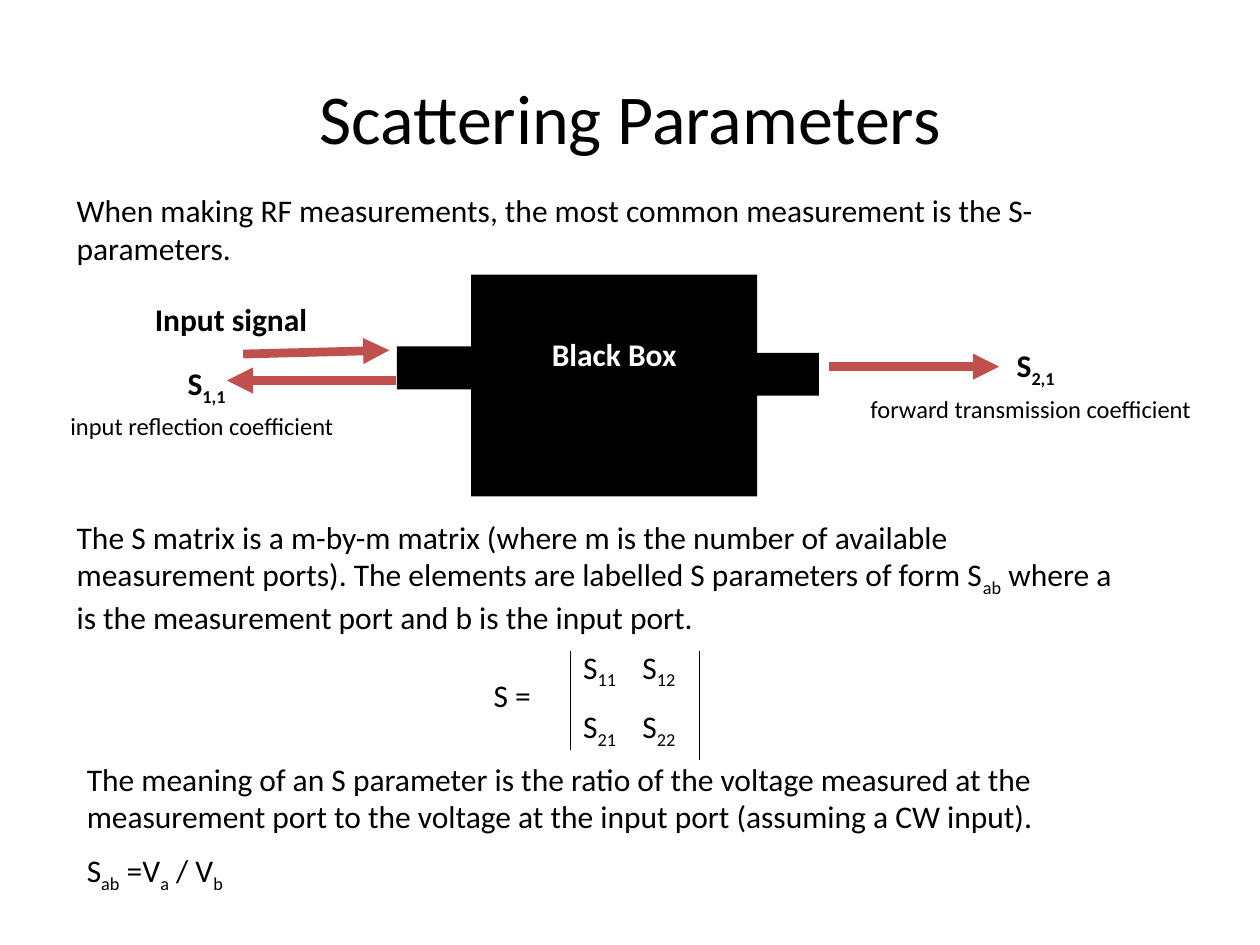
from pptx import Presentation, util as u
from pptx.dml.color import RGBColor
from pptx.enum import shapes, text
from pptx.oxml.ns import qn
from lxml import etree

BLACK, WHITE, RED = "000000", "FFFFFF", "C0504D"


def px(n):
    """100 px make one inch."""
    return u.Emu(n * 9144)


def rgb(value):
    return RGBColor.from_string(value)


def write(tf, paragraphs, size=18, bold=False, color=BLACK, align=None):
    """Fill a text frame; every second part between bars is a subscript."""
    for i, line in enumerate(paragraphs):
        p = tf.paragraphs[0] if i == 0 else tf.add_paragraph()
        if i:
            p.space_before = u.Pt(size / 2)
        p.alignment = align
        p.font.size, p.font.bold, p.font.name = u.Pt(size), bold, "Calibri"
        p.font.color.rgb = rgb(color)
        for j, part in enumerate(line.split("|")):
            r = p.add_run()
            r.text = part
            if j % 2:
                r.font._element.set("baseline", "-25000")


def add_text(s, x, y, w, h, *paragraphs, wrap=True, anchor=text.MSO_ANCHOR.TOP, **style):
    tf = s.shapes.add_textbox(px(x), px(y), px(w), px(h)).text_frame
    tf.word_wrap = wrap
    tf.vertical_anchor = anchor
    write(tf, paragraphs, **style)


def add_block(s, x, y, w, h):
    sp = s.shapes.add_shape(shapes.MSO_SHAPE.RECTANGLE, px(x), px(y), px(w), px(h))
    sp.shadow.inherit = False
    sp.fill.solid()
    sp.fill.fore_color.rgb = rgb(BLACK)
    sp.line.fill.background()
    return sp


def add_line(s, x1, y1, x2, y2, color=BLACK, width=0.75, arrow=False):
    c = s.shapes.add_connector(shapes.MSO_CONNECTOR.STRAIGHT, px(x1), px(y1), px(x2), px(y2))
    c.line.color.rgb = rgb(color)
    c.line.width = u.Pt(width)
    if arrow:
        etree.SubElement(c.line._get_or_add_ln(), qn("a:tailEnd"), type="triangle")
    etree.SubElement(c._element.spPr, qn("a:effectLst"))


def two_port_diagram(s, x, y):
    box = add_block(s, x + 328, y, 227, 176)
    tf = box.text_frame
    tf.vertical_anchor = text.MSO_ANCHOR.TOP
    tf.margin_top = px(48)
    write(tf, ["Black Box"], bold=True, color=WHITE, align=text.PP_ALIGN.CENTER)

    for x1, y1, x2, y2 in [(147, 63, 263, 60), (612, 73, 747, 73), (268, 84, 134, 84)]:
        add_line(s, x + x1, y + y1, x + x2, y + y2, RED, 5, arrow=True)
    for dx, dy in [(269, 57), (540, 62)]:
        add_block(s, x + dx, y + dy, 64, 34)

    for dx, dy, w, label in [(67, 15, 175, "Input signal"),
                             (93, 66, 89, "S|1,1"), (751, 52, 89, "S|2,1")]:
        add_text(s, x + dx, y + dy, w, 40, label, bold=True)
    for dx, dy, w, label in [(0, 103, 239, "input reflection coefficient"),
                             (635, 90, 292, "forward transmission coefficient")]:
        add_text(s, x + dx, y + dy, w, 33, label, wrap=False, size=14)


def s_matrix(s, x, y):
    add_text(s, x, y + 23, 94, 40, "S =")
    for row in range(2):
        for col in range(2):
            add_text(s, x + 71 + 47 * col, y + 47 * row, 102, 40, f"S|{row + 1}{col + 1}")
    for dx, length in [(71, 78), (173, 86)]:
        add_line(s, x + dx, y + 8, x + dx, y + 8 + length)


def scattering_slide(prs):
    s = prs.slides.add_slide(prs.slide_layouts[6])
    add_text(s, 50, 30, 900, 125, "Scattering Parameters", size=40,
             align=text.PP_ALIGN.CENTER, anchor=text.MSO_ANCHOR.MIDDLE)
    add_text(s, 51, 147, 898, 70,
             "When making RF measurements, the most common measurement is the S-parameters.")
    two_port_diagram(s, 46, 218)
    add_text(s, 51, 406, 858, 100,
             "The S matrix is a m-by-m matrix (where m is the number of available "
             "measurement ports). The elements are labelled S parameters of form S|ab| "
             "where a is the measurement port and b is the input port.")
    s_matrix(s, 382, 509)
    add_text(s, 59, 598, 882, 115,
             "The meaning of an S parameter is the ratio of the voltage measured at the "
             "measurement port to the voltage at the input port (assuming a CW input).",
             "S|ab| =V|a| / V|b")


def main():
    prs = Presentation()
    prs.slide_width, prs.slide_height = px(1000), px(750)
    scattering_slide(prs)
    prs.save("out.pptx")


if __name__ == "__main__":
    main()
